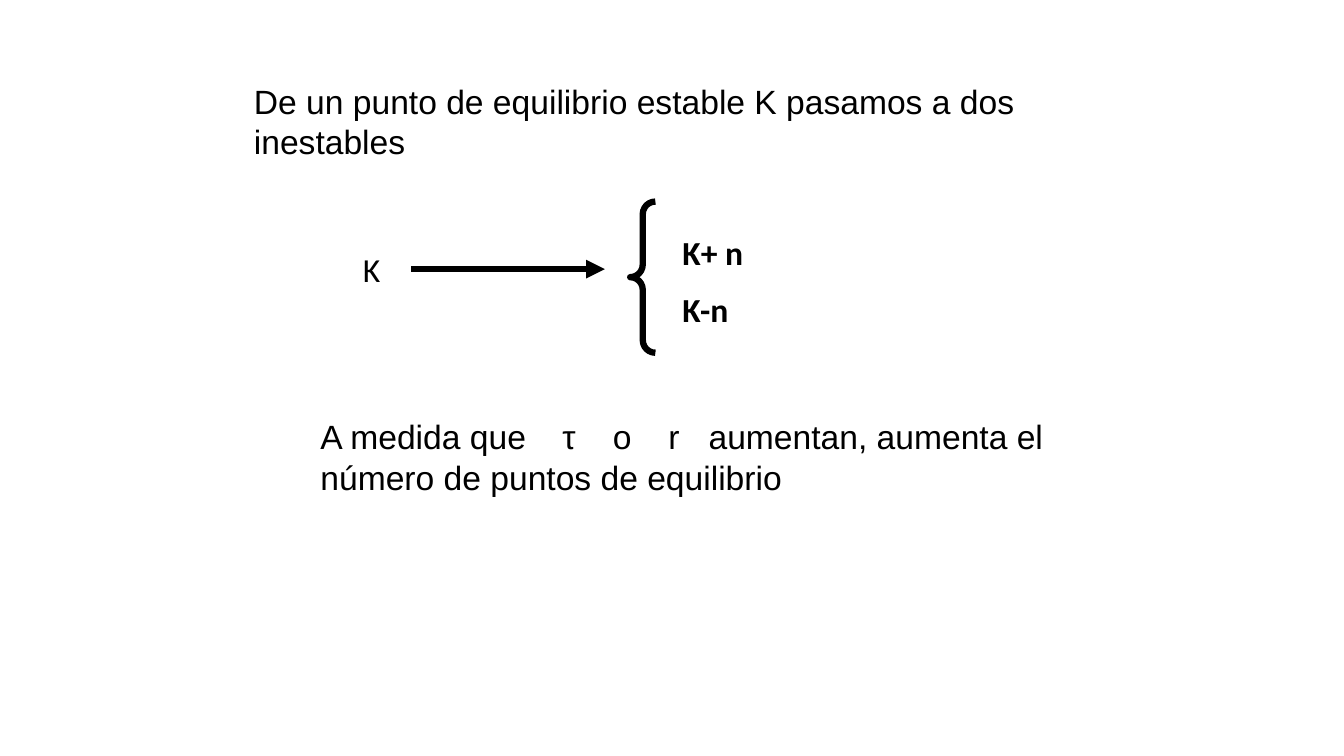
from dataclasses import dataclass

import lxml.etree
import pptx
import pptx.dml.color
import pptx.enum.shapes
import pptx.enum.text
import pptx.oxml.ns
import pptx.util

Inches = pptx.util.Inches
Pt = pptx.util.Pt
MSO_SHAPE = pptx.enum.shapes.MSO_SHAPE


@dataclass(frozen=True)
class Theme:
    ink: pptx.dml.color.RGBColor = pptx.dml.color.RGBColor(0, 0, 0)
    paper: pptx.dml.color.RGBColor = pptx.dml.color.RGBColor(255, 255, 255)
    prose_font: str = "Arial"
    symbol_font: str = "Calibri"
    text_size: pptx.util.Length = Pt(24)
    paragraph_gap: pptx.util.Length = Pt(12)
    stroke: pptx.util.Length = Pt(4.5)


THEME = Theme()


def add_child(parent, tag, **attributes):
    return lxml.etree.SubElement(parent, pptx.oxml.ns.qn(tag), **attributes)


def write_text(shape, lines, font, bold=False):
    frame = shape.text_frame
    frame.word_wrap = True
    frame.vertical_anchor = pptx.enum.text.MSO_ANCHOR.TOP
    frame.text = "\n".join(lines)
    for index, paragraph in enumerate(frame.paragraphs):
        paragraph.alignment = pptx.enum.text.PP_ALIGN.LEFT
        if index:
            paragraph.space_before = THEME.paragraph_gap
        paragraph.font.name = font
        paragraph.font.size = THEME.text_size
        paragraph.font.bold = bold
        paragraph.font.color.rgb = THEME.ink


def add_label(slide, left, top, width, height, lines, font, bold=False):
    label = slide.shapes.add_textbox(
        Inches(left), Inches(top), Inches(width), Inches(height))
    write_text(label, lines, font, bold)


def add_panel(slide, left, top, width, height, line, tab_stops):
    panel = slide.shapes.add_shape(
        MSO_SHAPE.RECTANGLE,
        Inches(left), Inches(top), Inches(width), Inches(height))
    panel.shadow.inherit = False
    panel.fill.solid()
    panel.fill.fore_color.rgb = THEME.paper
    panel.line.fill.background()
    write_text(panel, [line], THEME.prose_font)
    # Tab stops space out the symbols within the sentence
    properties = panel.text_frame.paragraphs[0]._p.get_or_add_pPr()
    tabs = lxml.etree.Element(pptx.oxml.ns.qn("a:tabLst"))
    for stop in tab_stops:
        add_child(tabs, "a:tab", pos=str(Inches(stop)), algn="l")
    properties.insert_element_before(tabs, "a:defRPr", "a:extLst")


def set_stroke(line):
    line.color.rgb = THEME.ink
    line.width = THEME.stroke


def add_arrow(slide, start_x, end_x, y):
    arrow = slide.shapes.add_connector(
        pptx.enum.shapes.MSO_CONNECTOR.STRAIGHT,
        Inches(start_x), Inches(y), Inches(end_x), Inches(y))
    set_stroke(arrow.line)
    add_child(arrow.line._get_or_add_ln(), "a:tailEnd", type="triangle")
    add_child(arrow._element.spPr, "a:effectLst")


def add_brace(slide, left, top, width, height):
    brace = slide.shapes.add_shape(
        MSO_SHAPE.LEFT_BRACE,
        Inches(left), Inches(top), Inches(width), Inches(height))
    brace.shadow.inherit = False
    brace.fill.background()
    set_stroke(brace.line)
    brace.adjustments[0] = 0.5
    brace.adjustments[1] = 0.5


def main():
    presentation = pptx.Presentation()
    presentation.slide_width = Inches(13.33)
    presentation.slide_height = Inches(7.5)
    slide = presentation.slides.add_slide(presentation.slide_layouts[6])

    # Opening statement
    add_label(slide, 2.42, 0.75, 8.5, 0.91,
              ["De un punto de equilibrio estable K pasamos a dos inestables"],
              THEME.prose_font)

    # K splits into two equilibrium points
    add_label(slide, 6.67, 2.25, 1.25, 1.11, ["K+ n", "K-n"],
              THEME.symbol_font, bold=True)
    add_label(slide, 3.5, 2.42, 0.67, 0.5, ["K"], THEME.symbol_font)
    add_arrow(slide, 4.08, 6, 2.67)
    add_brace(slide, 6.25, 2, 0.25, 1.5)

    # Conclusion
    add_panel(slide, 3.08, 4.08, 7.42, 0.91,
              "A medida que\tτ\to\tr\taumentan, "
              "aumenta el número de puntos de equilibrio",
              tab_stops=(2.4, 2.9, 3.45, 3.85))

    presentation.save("out.pptx")


if __name__ == "__main__":
    main()
